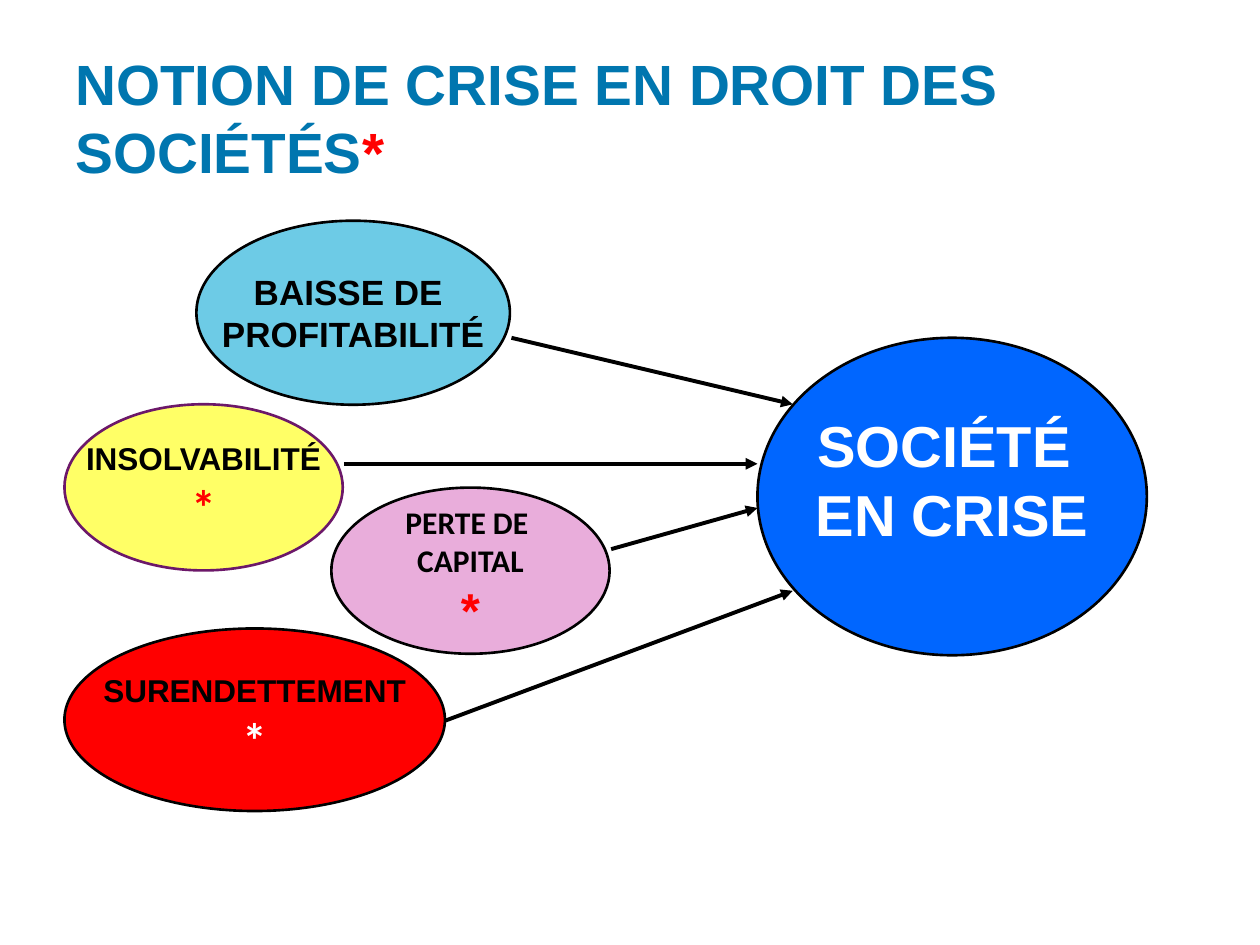
from lxml import etree
from pptx import Presentation
from pptx.dml.color import RGBColor
from pptx.enum import shapes, text
from pptx.oxml import ns
from pptx.util import Cm, Pt

HUES = {
    "title": "0076AF", "blue": "0066FF", "pink": "E9ADDB", "sky": "6DCBE6",
    "yellow": "FFFF66", "red": "FF0000", "plum": "6C1869",
    "black": "000000", "white": "FFFFFF",
}


def hue(name):
    return RGBColor.from_string(HUES[name])


class Deck:
    def __init__(self):
        self.show = Presentation()
        self.show.slide_width = Cm(25.4)
        self.show.slide_height = Cm(19.05)
        self.slide = self.show.slides.add_slide(self.show.slide_layouts[6])

    def style(self, run, size, color, face="Arial"):
        run.font.size = Pt(size)
        run.font.name = face
        run.font.bold = True
        run.font.color.rgb = hue(color)

    def title(self, words, mark, box):
        frame = self.slide.shapes.add_textbox(*map(Cm, box)).text_frame
        frame.word_wrap = True
        frame.vertical_anchor = text.MSO_ANCHOR.MIDDLE
        frame.text = words
        para = frame.paragraphs[0]
        self.style(para.runs[0], 32.4, "title")
        star = para.add_run()
        star.text = mark
        self.style(star, 32.4, "red")

    def oval(self, box, fill, lines, edge="black"):
        oval = self.slide.shapes.add_shape(shapes.MSO_SHAPE.OVAL, *map(Cm, box))
        oval.shadow.inherit = False
        oval.fill.solid()
        oval.fill.fore_color.rgb = hue(fill)
        oval.line.color.rgb = hue(edge)
        oval.line.width = Pt(1.5)
        frame = oval.text_frame
        frame.word_wrap = False
        frame.vertical_anchor = text.MSO_ANCHOR.MIDDLE
        frame.text = "\n".join(line[0] for line in lines)
        for para, (_, *look) in zip(frame.paragraphs, lines):
            para.alignment = text.PP_ALIGN.CENTER
            self.style(para.runs[0], *look)
        return frame

    def arrow(self, ends):
        line = self.slide.shapes.add_connector(
            shapes.MSO_CONNECTOR.STRAIGHT, *map(Cm, ends))
        line.line.color.rgb = hue("black")
        line.line.width = Pt(2.25)
        etree.SubElement(line.line._get_or_add_ln(), ns.qn("a:tailEnd"), type="triangle")
        etree.SubElement(line._element.spPr, ns.qn("a:effectLst"))


def main():
    deck = Deck()
    deck.title("NOTION DE CRISE EN DROIT DES SOCIÉTÉS", "*",
               (1.27, 0.76, 22.86, 3.18))

    firm = deck.oval((15.27, 6.81, 7.85, 6.4), "blue",
                     [("SOCIÉTÉ ", 33, "white"), ("EN CRISE", 33, "white")])
    firm.margin_left = firm.margin_right = firm.margin_top = 0
    firm.margin_bottom = Cm(0.7)

    deck.oval((6.68, 9.83, 5.61, 3.35), "pink",
              [("PERTE DE ", 18, "black", "Calibri"),
               ("CAPITAL", 18, "black", "Calibri"),
               ("*", 28, "red")])
    deck.oval((3.96, 4.45, 6.32, 3.71), "sky",
              [("BAISSE DE ", 20, "black"), ("PROFITABILITÉ", 20, "black")])
    deck.oval((1.3, 8.15, 5.61, 3.35), "yellow",
              [("INSOLVABILITÉ", 18, "black"), ("*", 28, "red", "Calibri")], "plum")
    deck.oval((1.3, 12.67, 7.67, 3.68), "red",
              [("SURENDETTEMENT", 18, "black"), ("*", 28, "white", "Calibri")])

    for ends in [
        (10.31, 6.81, 15.98, 8.15),
        (6.93, 9.35, 15.27, 9.35),
        (12.32, 11.07, 15.27, 10.24),
        (8.97, 14.53, 15.98, 11.91),
    ]:
        deck.arrow(ends)

    deck.show.save("out.pptx")


if __name__ == "__main__":
    main()
